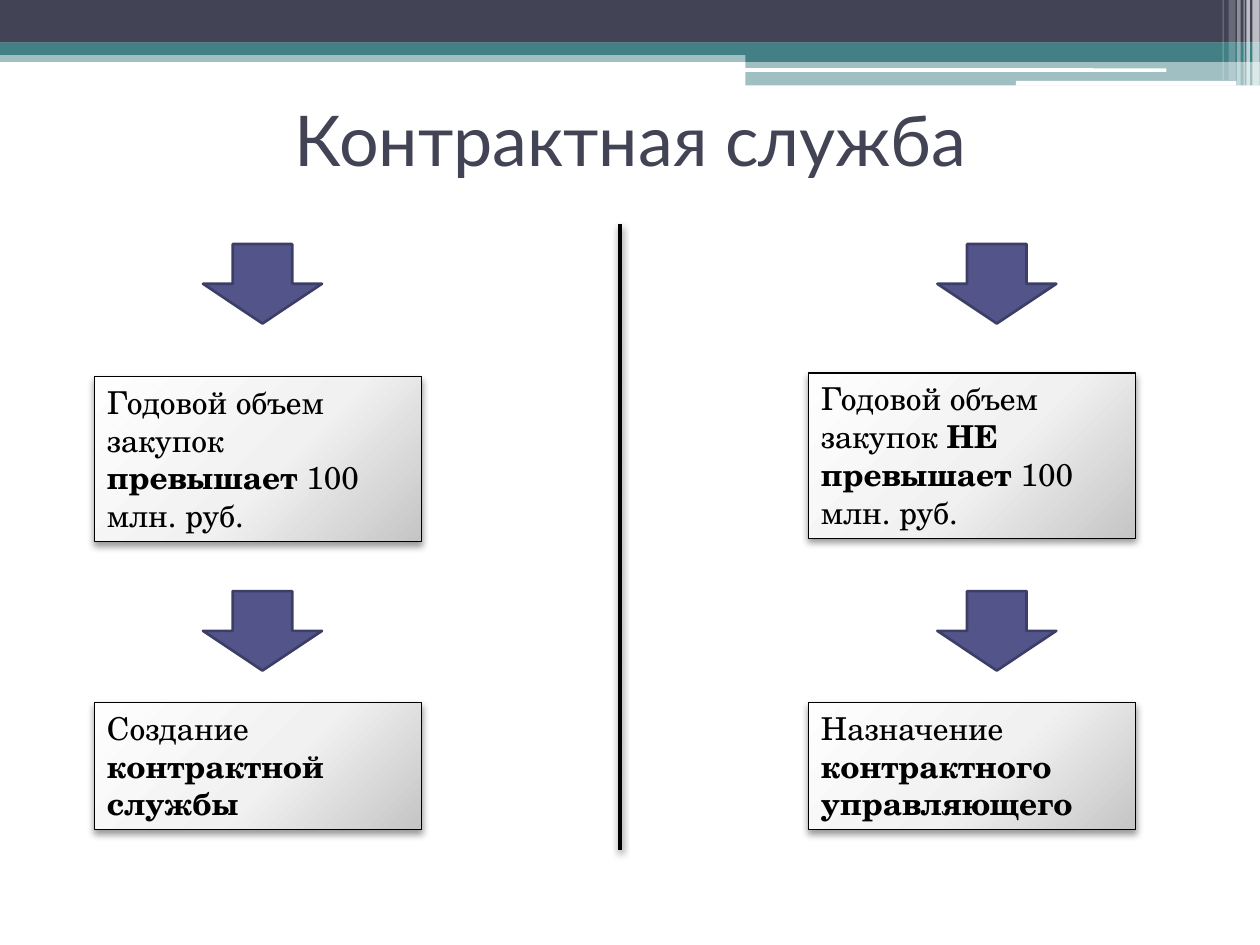
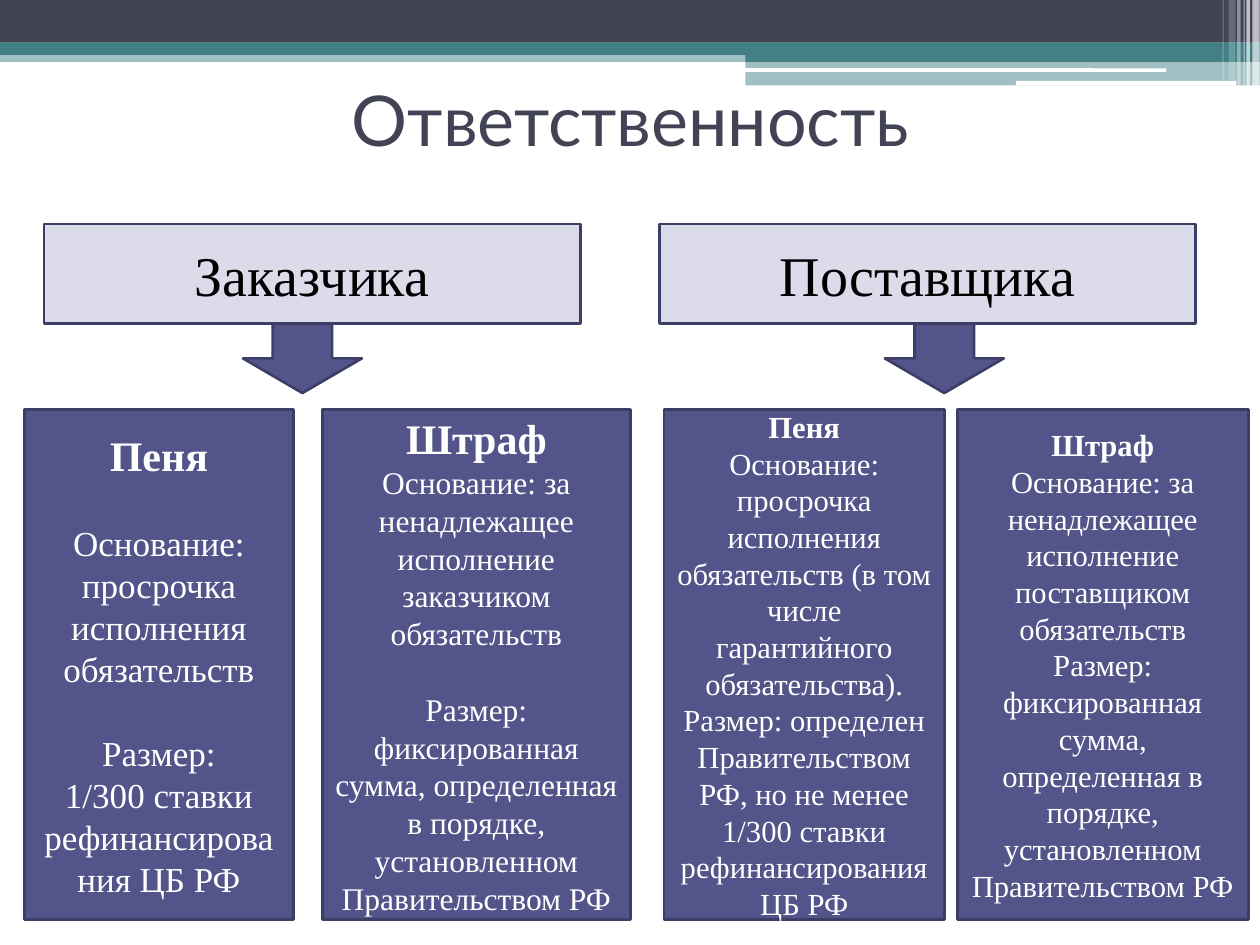
import pptx
import pptx.util
from lxml import etree
from pptx.dml.color import RGBColor
from pptx.enum.shapes import MSO_CONNECTOR, MSO_SHAPE
from pptx.enum.text import MSO_ANCHOR, MSO_AUTO_SIZE, PP_ALIGN
from pptx.oxml import parse_xml
from pptx.oxml.ns import qn

Pt = pptx.util.Pt
NS = 'xmlns:a="http://schemas.openxmlformats.org/drawingml/2006/main"'

WHITE, BLACK = "FFFFFF", "000000"
DARK, TEAL = "424456", "438086"
VIOLET, EDGE, PALE = "53548A", "3D3E66", "DBDBE9"
HEAD, SERIF, SCHOOL = "Lato", "Times New Roman", "TeX Gyre Schola"

# left, top, width, height, colour, opacity in percent
BANDS = [
    (0, 28.8, 720, 6.6, TEAL, 50),
    (0, 0, 720, 24.4, DARK, 100),
    (0, 24.2, 720, 7.2, TEAL, 100),
    (426, 28.2, 294, 7.2, TEAL, 100),
    (426, 34.8, 294, 14, TEAL, 50),
]
RULES = [(425.5, 39, 241, 2), (580.5, 46.2, 126, 2.7)]
# left, width, height, opacity
STRIPES = [
    (715.6, 4.2, 48.9, 65),
    (712.2, 2, 48.9, 65),
    (710.6, 0.7, 48.9, 60),
    (707, 2, 48.9, 40),
    (702, 4, 46, 20),
    (698.6, 0.7, 46, 30),
]


def color(code):
    return RGBColor.from_string(code)


def add_block(slide, kind, box, fill, line=None, width=1.5, alpha=100):
    """Add a flat preset shape; box is left, top, width, height."""
    shape = slide.shapes.add_shape(kind, *map(Pt, box))
    shape.shadow.inherit = False
    if fill:
        shape.fill.solid()
        shape.fill.fore_color.rgb = color(fill)
    if alpha < 100:
        tint = shape._element.spPr.find(".//" + qn("a:srgbClr"))
        etree.SubElement(tint, qn("a:alpha"), val=str(alpha * 1000))
    if line:
        shape.line.color.rgb = color(line)
        shape.line.width = Pt(width)
    else:
        shape.line.fill.background()
    return shape


def style(part, size, font, code, bold=False):
    part.font.size = Pt(size)
    part.font.name = font
    part.font.bold = bold
    part.font.color.rgb = color(code)


def add_label(shape, text, size, font, code):
    """Put one centred line into a shape."""
    frame = shape.text_frame
    frame.word_wrap = True
    frame.vertical_anchor = MSO_ANCHOR.MIDDLE
    frame.text = text
    para = frame.paragraphs[0]
    para.alignment = PP_ALIGN.CENTER
    style(para.runs[0], size, font, code)


def add_shade(item, alpha, blur):
    """Give a soft shadow that falls straight down."""
    props = item._element.spPr
    for old in props.findall(qn("a:effectLst")):
        props.remove(old)
    props.append(parse_xml(
        f'<a:effectLst {NS}><a:outerShdw blurRad="{Pt(blur)}" dist="{Pt(2)}" '
        f'dir="5400000" rotWithShape="0"><a:srgbClr val="{BLACK}">'
        f'<a:alpha val="{alpha * 1000}"/></a:srgbClr></a:outerShdw></a:effectLst>'))


def add_glow(shape):
    """Fill with a round gradient, from white to grey."""
    shape.fill.gradient()
    grad = shape._element.spPr.find(qn("a:gradFill"))
    for child in list(grad):
        grad.remove(child)
    stops = etree.SubElement(grad, qn("a:gsLst"))
    for pos, code in ((0, "FEFEFE"), (55, "F1F1F1"), (100, "C5C5C5")):
        stop = etree.SubElement(stops, qn("a:gs"), pos=str(pos * 1000))
        etree.SubElement(stop, qn("a:srgbClr"), val=code)
    round_ = etree.SubElement(grad, qn("a:path"), path="circle")
    etree.SubElement(round_, qn("a:fillToRect"),
                     l="-40000", t="-90000", r="140000", b="190000")


def add_base(deck, title, top):
    """Start a slide with the shared bands and a title."""
    slide = deck.slides.add_slide(deck.slide_layouts[6])
    for *box, code, alpha in BANDS:
        add_block(slide, MSO_SHAPE.RECTANGLE, box, code, alpha=alpha)
    for box in RULES:
        add_block(slide, MSO_SHAPE.ROUNDED_RECTANGLE, box, WHITE)
    for left, width, height, alpha in STRIPES:
        add_block(slide, MSO_SHAPE.RECTANGLE, (left, 0, width, height),
                  WHITE, alpha=alpha)
    head = slide.shapes.add_textbox(Pt(36.3), Pt(top), Pt(648), Pt(84))
    add_label(head, title, 40, HEAD, DARK)
    return slide


def add_arrow(slide, left, top, height):
    add_block(slide, MSO_SHAPE.DOWN_ARROW, (left, top, 68, height), VIOLET, EDGE)


def add_note(slide, left, top, height, text):
    """Add a shaded box; text between asterisks is bold."""
    note = add_block(slide, MSO_SHAPE.RECTANGLE, (left, top, 187, height),
                     None, BLACK, 0.75)
    add_glow(note)
    add_shade(note, 40, 4.1)
    frame = note.text_frame
    frame.word_wrap = True
    frame.auto_size = MSO_AUTO_SIZE.SHAPE_TO_FIT_TEXT
    frame.vertical_anchor = MSO_ANCHOR.TOP
    para = frame.paragraphs[0]
    para.alignment = PP_ALIGN.LEFT
    for i, piece in enumerate(text.split("*")):
        if piece:
            run = para.add_run()
            run.text = piece
            style(run, 18, SCHOOL, BLACK, i % 2 == 1)


def add_card(slide, left, width, sizes, lines, gaps=()):
    """Add a card: a bold heading and lines; gaps lists lines set apart."""
    card = add_block(slide, MSO_SHAPE.RECTANGLE, (left, 234, width, 291.6),
                     VIOLET, EDGE)
    frame = card.text_frame
    frame.word_wrap = True
    frame.vertical_anchor = MSO_ANCHOR.MIDDLE
    frame.text = "\n".join(lines)
    big, small = sizes
    for i, para in enumerate(frame.paragraphs):
        para.alignment = PP_ALIGN.CENTER
        if i in gaps:
            para.space_before = Pt(small * 1.2)
        style(para.runs[0], small if i else big, SERIF, WHITE, i == 0)


def add_staff(deck):
    slide = add_base(deck, "Контрактная служба", 37.4)
    sides = [
        (54, 116, 215.2, "Годовой объем закупок *превышает* 100 млн. руб.",
         "Создание *контрактной службы*"),
        (462, 535.6, 213.2, "Годовой объем закупок *НЕ превышает *100 млн. руб.",
         "Назначение *контрактного управляющего*"),
    ]
    for left, tip, top, cause, result in sides:
        for y in (139.5, 337.8):
            add_arrow(slide, tip, y, 45.4)
        add_note(slide, left, top, 94.4, cause)
        add_note(slide, left, 401.5, 72.7, result)
    line = slide.shapes.add_connector(
        MSO_CONNECTOR.STRAIGHT, Pt(354.4), Pt(128), Pt(354.4), Pt(485.5))
    line.line.color.rgb = color(BLACK)
    line.line.width = Pt(2.5)
    add_shade(line, 45, 4)


def add_duty(deck):
    slide = add_base(deck, "Ответственность", 26)
    for left, tip, name in ((25.2, 138.8, "Заказчика"),
                            (376.8, 505.6, "Поставщика")):
        party = add_block(slide, MSO_SHAPE.RECTANGLE, (left, 128, 306.4, 57),
                          PALE, EDGE)
        add_label(party, name, 32, SERIF, BLACK)
        add_arrow(slide, tip, 185, 39.6)
    rate = "1/300 ставки рефинансирования ЦБ РФ"
    fixed = ("Размер: фиксированная сумма, определенная в порядке, "
             "установленном Правительством РФ")
    add_card(slide, 14, 153.6, (24, 20), [
        "Пеня", "Основание: просрочка исполнения обязательств",
        "Размер:", rate], gaps=(1, 2))
    add_card(slide, 184.2, 176, (24, 18), [
        "Штраф",
        "Основание: за ненадлежащее исполнение заказчиком обязательств",
        fixed], gaps=(2,))
    add_card(slide, 379.4, 160.4, (17.5, 17.5), [
        "Пеня",
        "Основание: просрочка исполнения обязательств "
        "(в том числе гарантийного обязательства).",
        "Размер: определен Правительством РФ, но не менее", rate])
    add_card(slide, 547, 166.4, (17.5, 17.5), [
        "Штраф", "Основание: за ненадлежащее исполнение поставщиком",
        "обязательств", fixed])


def main():
    deck = pptx.Presentation()
    deck.slide_width, deck.slide_height = Pt(720), Pt(540)
    add_staff(deck)
    add_duty(deck)
    deck.save("out.pptx")


if __name__ == "__main__":
    main()
